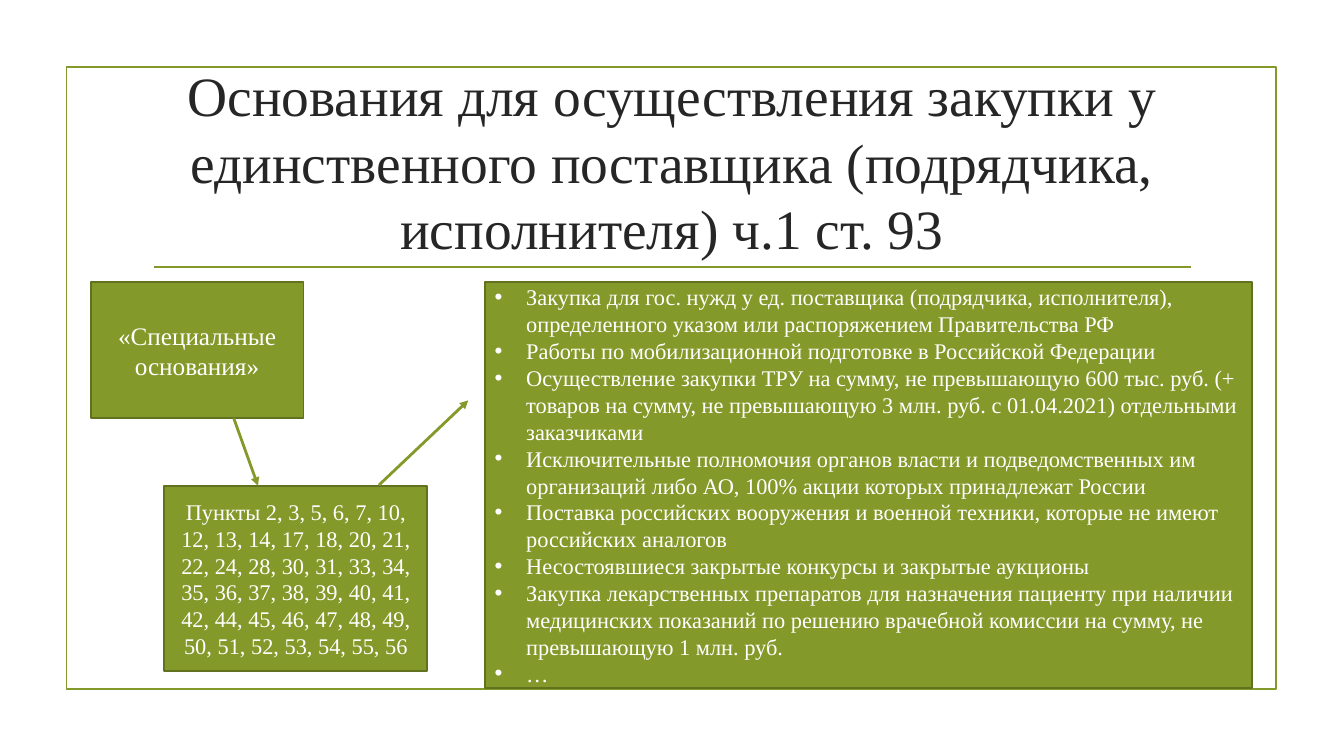
from pptx import Presentation
from pptx.dml.color import RGBColor
from pptx.enum.shapes import MSO_CONNECTOR, MSO_SHAPE
from pptx.enum.text import MSO_ANCHOR, MSO_AUTO_SIZE, PP_ALIGN
from pptx.oxml.ns import qn
from pptx.util import Pt
from lxml.etree import SubElement

GREEN = RGBColor(0x83, 0x99, 0x2A)
DARK_GREEN = RGBColor(0x61, 0x71, 0x1F)
DARK = RGBColor(0x26, 0x26, 0x26)
WHITE = RGBColor(0xFF, 0xFF, 0xFF)

TITLE = ("Основания для осуществления закупки у единственного поставщика "
         "(подрядчика, исполнителя) ч.1 ст. 93")
CLAUSES = ("Пункты 2, 3, 5, 6, 7, 10, 12, 13, 14, 17, 18, 20, 21, 22, 24, 28, 30, 31, "
           "33, 34, 35, 36, 37, 38, 39, 40, 41, 42, 44, 45, 46, 47, 48, 49, 50, 51, "
           "52, 53, 54, 55, 56")
GROUNDS = [
    "Закупка для гос. нужд у ед. поставщика (подрядчика, исполнителя), "
    "определенного указом или распоряжением Правительства РФ",
    "Работы по мобилизационной подготовке в Российской Федерации",
    "Осуществление закупки ТРУ на сумму, не превышающую 600 тыс. руб. (+ товаров "
    "на сумму, не превышающую 3 млн. руб. с 01.04.2021) отдельными заказчиками",
    "Исключительные полномочия органов власти и подведомственных им организаций "
    "либо АО, 100% акции которых принадлежат России",
    "Поставка российских вооружения и военной техники, которые не имеют "
    "российских аналогов",
    "Несостоявшиеся закрытые конкурсы и закрытые аукционы",
    "Закупка лекарственных препаратов для назначения пациенту при наличии "
    "медицинских показаний по решению врачебной комиссии на сумму, "
    "не превышающую 1 млн. руб.",
    "…",
]


class SlideBuilder:
    """Holds the style and the current slide."""

    font_name = "Times New Roman"
    bullet_indent = Pt(22.5)

    def __init__(self, page):
        self.page = page

    def place(self, shape, left, top, width, height):
        shape.left, shape.top = Pt(left), Pt(top)
        shape.width, shape.height = Pt(width), Pt(height)

    def paint(self, shape, line_color, fill_color=None):
        if fill_color is None:
            shape.fill.background()
        else:
            shape.fill.solid()
            shape.fill.fore_color.rgb = fill_color
        shape.line.color.rgb = line_color
        shape.line.width = Pt(1.25)

    def add_text(self, shape, texts, size, color=WHITE, bullets=False):
        frame = shape.text_frame
        frame.word_wrap = True
        frame.auto_size = MSO_AUTO_SIZE.NONE
        frame.vertical_anchor = MSO_ANCHOR.MIDDLE
        for index, text in enumerate(texts):
            para = frame.paragraphs[0] if index == 0 else frame.add_paragraph()
            para.alignment = PP_ALIGN.LEFT if bullets else PP_ALIGN.CENTER
            para.space_before = Pt(0)
            self.set_bullet(para, bullets)
            span = para.add_run()
            span.text = text
            span.font.name = self.font_name
            span.font.size = Pt(size)
            span.font.color.rgb = color

    def set_bullet(self, para, bullets):
        properties = para._p.get_or_add_pPr()
        indent = self.bullet_indent if bullets else 0
        properties.set("marL", str(indent))
        properties.set("indent", str(-indent))
        if bullets:
            SubElement(properties, qn("a:buFont"), typeface="Arial")
            SubElement(properties, qn("a:buChar"), char="•")
        else:
            SubElement(properties, qn("a:buNone"))

    def title(self, text, bounds, size):
        shape = self.page.shapes.title
        self.place(shape, *bounds)
        self.add_text(shape, [text], size, DARK)

    def body(self, text, bounds, size):
        shape = self.page.placeholders[1]
        self.place(shape, *bounds)
        self.paint(shape, DARK_GREEN, GREEN)
        self.add_text(shape, [text], size)

    def rectangle(self, bounds, line_color, fill_color=None):
        lengths = [Pt(value) for value in bounds]
        shape = self.page.shapes.add_shape(MSO_SHAPE.RECTANGLE, *lengths)
        shape.shadow.inherit = False
        self.paint(shape, line_color, fill_color)
        return shape

    def box(self, texts, bounds, size, bullets=False):
        shape = self.rectangle(bounds, DARK_GREEN, GREEN)
        self.add_text(shape, texts, size, bullets=bullets)

    def line(self, start, end, width, arrow=False):
        points = [Pt(value) for value in (*start, *end)]
        connector = self.page.shapes.add_connector(MSO_CONNECTOR.STRAIGHT, *points)
        connector.line.color.rgb = GREEN
        connector.line.width = Pt(width)
        properties = connector._element.spPr
        if arrow:
            SubElement(properties.find(qn("a:ln")), qn("a:tailEnd"), type="triangle")
        SubElement(properties, qn("a:effectLst"))


def main():
    deck = Presentation()
    deck.slide_width, deck.slide_height = Pt(960), Pt(540)
    slide = SlideBuilder(deck.slides.add_slide(deck.slide_layouts[1]))

    # Frame and rule under the title
    slide.rectangle((47.5, 48, 864, 444), GREEN)
    slide.line((110, 190.8), (850.5, 190.8), 1.25)

    # Title
    slide.title(TITLE, (102, 63.5, 756, 103), 39.6)

    # Special grounds, their clauses and what they cover
    slide.box(["«Специальные основания»"], (64.8, 201.5, 152, 97.3), 18)
    slide.body(CLAUSES, (117.3, 347, 188, 132.5), 16)
    slide.box(GROUNDS, (346.3, 201.5, 548, 290), 16, bullets=True)

    # Arrows
    slide.line((167, 298.8), (184.3, 347), 2, arrow=True)
    slide.line((270.7, 346.5), (334.5, 286), 2, arrow=True)

    deck.save("out.pptx")


if __name__ == "__main__":
    main()
